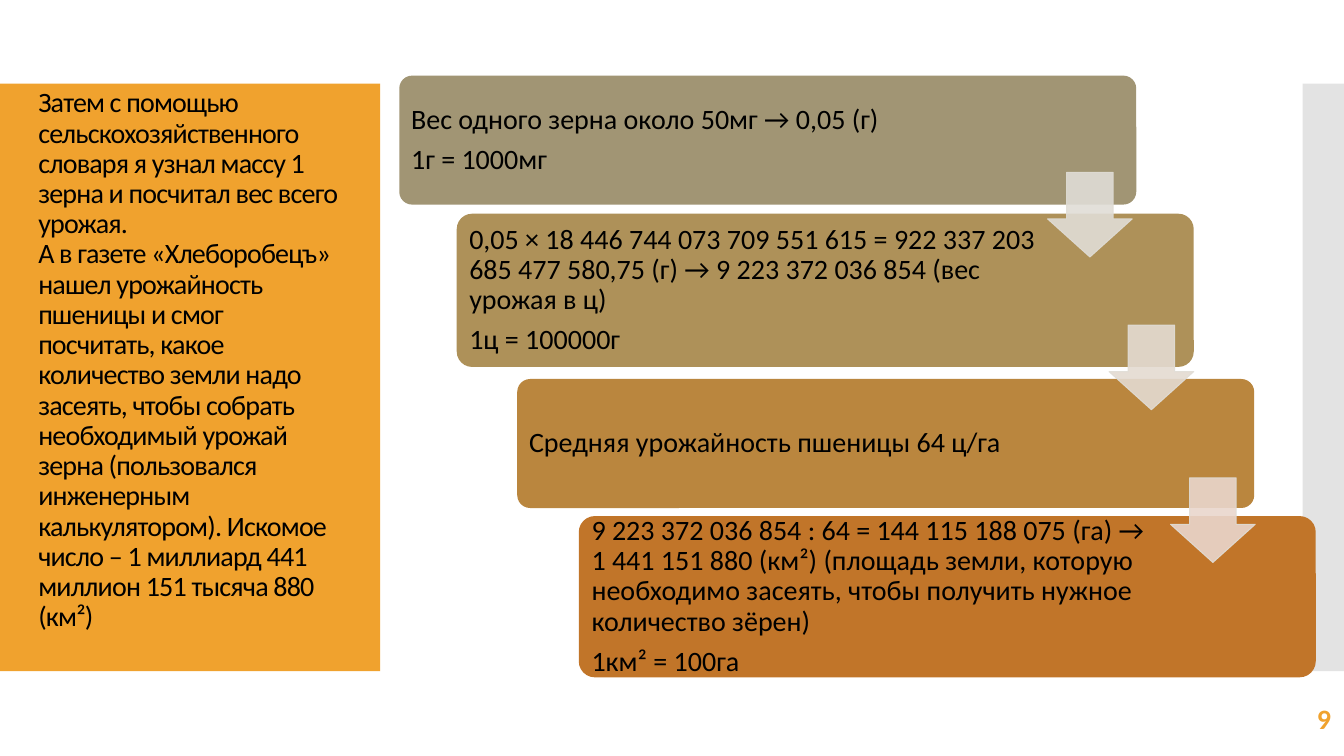
from dataclasses import dataclass

import pptx
import pptx.dml.color
import pptx.enum.shapes
import pptx.enum.text
import pptx.oxml.ns
import pptx.util
from lxml import etree

Inches = pptx.util.Inches
Pt = pptx.util.Pt
Shapes = pptx.enum.shapes.MSO_SHAPE
Anchor = pptx.enum.text.MSO_ANCHOR
Align = pptx.enum.text.PP_ALIGN

ACCENT = "F0A22E"
ARROW_LINE = "E0DDD6"
ARROW_COLORS = ["E0DDD6", "E4DBD1", "E9D6CD"]
ARROW_SIZE = 0.84

STORY = [
    "Затем с помощью сельскохозяйственного словаря я узнал массу 1 зерна "
    "и посчитал вес всего урожая.",
    "А в газете «Хлеборобецъ» нашел урожайность пшеницы и смог посчитать, "
    "какое количество земли надо засеять, чтобы собрать необходимый урожай "
    "зерна (пользовался инженерным калькулятором). Искомое число – "
    "1 миллиард 441 миллион 151 тысяча 880 (км²)",
]


@dataclass
class Card:
    left: float
    top: float
    height: float
    color: str
    lines: list[str]


CARDS = [
    Card(3.96, 0.75, 1.28, "A19574",
         ["Вес одного зерна около 50мг → 0,05 (г)", "1г = 1000мг"]),
    Card(4.53, 2.12, 1.52, "AE9159",
         ["0,05 × 18 446 744 073 709 551 615 = 922 337 203 685 477 580,75 (г) "
          "→ 9 223 372 036 854 (вес урожая в ц)", "1ц = 100000г"]),
    Card(5.13, 3.76, 1.28, "BA863E",
         ["Средняя урожайность пшеницы 64 ц/га"]),
    Card(5.74, 5.12, 1.6, "C17529",
         ["9 223 372 036 854 : 64 = 144 115 188 075 (га) → 1 441 151 880 (км²) "
          "(площадь земли, которую необходимо засеять, чтобы получить нужное "
          "количество зёрен)", "1км² = 100га"]),
]


def rgb(color: str) -> pptx.dml.color.RGBColor:
    return pptx.dml.color.RGBColor.from_string(color)


def apply(target, values: dict) -> None:
    for name, value in values.items():
        setattr(target, name, value)


def set_opacity(shape, percent: int) -> None:
    for color in shape._element.spPr.iter(pptx.oxml.ns.qn("a:srgbClr")):
        alpha = etree.SubElement(color, pptx.oxml.ns.qn("a:alpha"))
        alpha.set("val", str(percent * 1000))


def add_block(page, kind, left: float, top: float, width: float, height: float,
              color: str, adjustments: tuple = ()):
    shape = page.shapes.add_shape(
        kind, Inches(left), Inches(top), Inches(width), Inches(height))
    shape.shadow.inherit = False
    shape.fill.solid()
    shape.fill.fore_color.rgb = rgb(color)
    shape.line.fill.background()
    for index, value in enumerate(adjustments):
        shape.adjustments[index] = value
    return shape


def write(box, lines: list[str], frame_format: dict, color: str = "000000",
          bold: bool = False, align=Align.LEFT, gap: float = 0,
          tracking: int = 0) -> None:
    frame = box.text_frame
    apply(frame, {"word_wrap": True, **frame_format})
    for index, line in enumerate(lines):
        para = frame.add_paragraph() if index else frame.paragraphs[0]
        apply(para, {"alignment": align, "line_spacing": 0.9,
                     "space_before": Pt(0), "space_after": Pt(gap)})
        span = para.add_run()
        span.text = line
        apply(span.font, {"name": "Calibri", "size": Pt(20), "bold": bold})
        span.font.color.rgb = rgb(color)
        if tracking:
            span.font._element.set("spc", str(tracking))


def add_card(page, card: Card) -> None:
    box = add_block(page, Shapes.ROUNDED_RECTANGLE, card.left, card.top, 7.31,
                    card.height, card.color, (0.1,))
    write(box, card.lines,
          {"vertical_anchor": Anchor.MIDDLE, "margin_left": Inches(0.08),
           "margin_right": Inches(1.51), "margin_top": 0, "margin_bottom": 0},
          gap=7)


def add_arrow(page, index: int, color: str) -> None:
    arrow = add_block(page, Shapes.DOWN_ARROW, 10.39 + 0.61 * index,
                      1.71 + 1.515 * index, ARROW_SIZE, ARROW_SIZE, color,
                      (0.55, 0.45))
    arrow.line.color.rgb = rgb(ARROW_LINE)
    arrow.line.width = Pt(0.75)
    set_opacity(arrow, 90)


def main() -> None:
    deck = pptx.Presentation()
    apply(deck, {"slide_width": Inches(13.33), "slide_height": Inches(7.5)})
    page = deck.slides.add_slide(deck.slide_layouts[6])

    panel = add_block(page, Shapes.RECTANGLE, 0, 0.83, 3.77, 5.83, ACCENT)
    write(panel, STORY,
          {"vertical_anchor": Anchor.TOP, "margin_left": Inches(0.38),
           "margin_right": Inches(0.37), "margin_top": Inches(0.05)},
          tracking=-60)
    strip = add_block(page, Shapes.RECTANGLE, 12.92, 0.83, 0.41, 5.83, "C8C8C8")
    set_opacity(strip, 50)

    for card in CARDS:
        add_card(page, card)
    for index, color in enumerate(ARROW_COLORS):
        add_arrow(page, index, color)

    number = page.shapes.add_textbox(
        Inches(11.63), Inches(6.95), Inches(1.67), Inches(0.4))
    write(number, ["9"], {"vertical_anchor": Anchor.MIDDLE}, ACCENT,
          bold=True, align=Align.RIGHT)
    deck.save("out.pptx")


if __name__ == "__main__":
    main()
